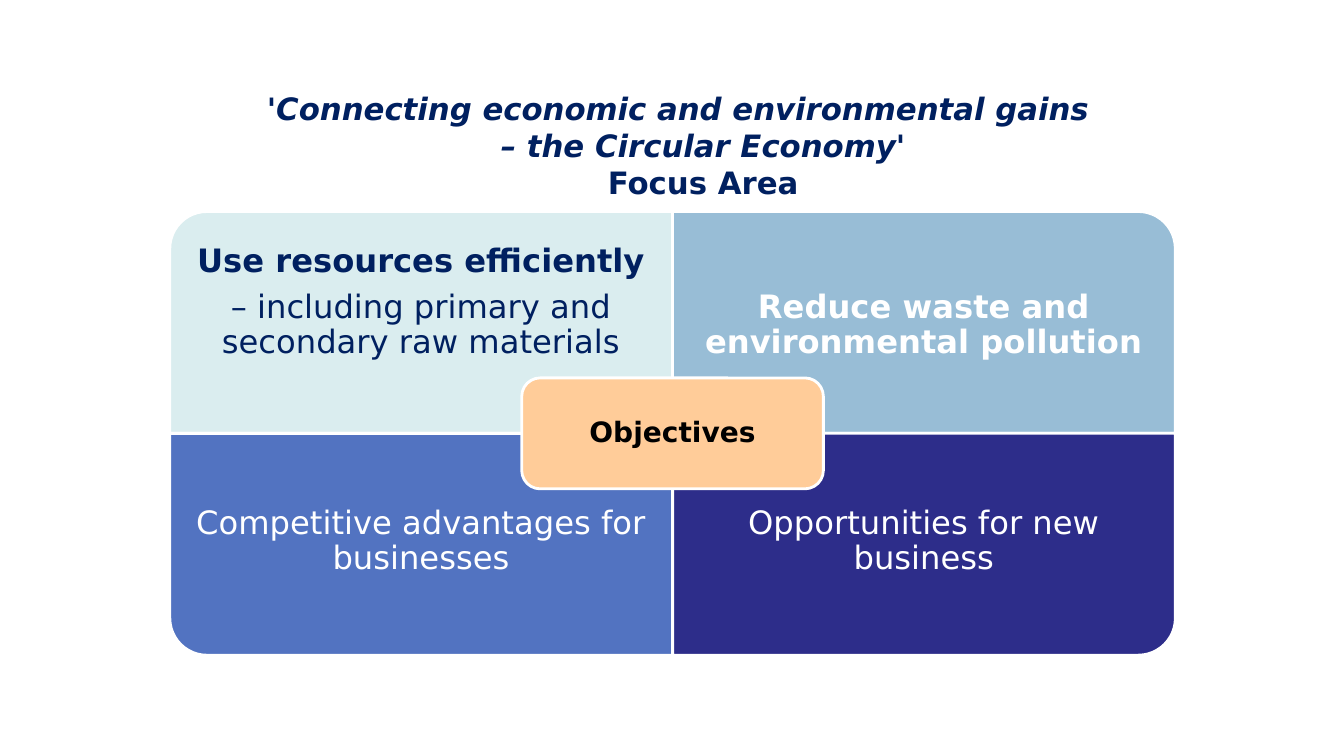
"""Build the slide on the four objectives of the circular economy focus area."""
from pptx import Presentation
from pptx.dml.color import RGBColor
from pptx.enum.shapes import MSO_SHAPE
from pptx.enum.text import MSO_ANCHOR, MSO_AUTO_SIZE, PP_ALIGN
from pptx.util import Cm, Pt

TILE, HUB = MSO_SHAPE.ROUND_1_RECTANGLE, MSO_SHAPE.ROUNDED_RECTANGLE
TOP, MIDDLE, BOTTOM = MSO_ANCHOR.TOP, MSO_ANCHOR.MIDDLE, MSO_ANCHOR.BOTTOM
CENTER, NO_AUTOFIT = PP_ALIGN.CENTER, MSO_AUTO_SIZE.NONE

FONT = "DejaVu Sans"
COLORS = {
    "navy": "002060", "white": "FFFFFF", "black": "000000", "ice": "DAEDEF",
    "sky": "98BDD6", "blue": "5273C1", "indigo": "2D2D8A", "peach": "FFCC99",
}

TITLE = [[
    ("'Connecting economic and environmental gains \v– the Circular Economy'\v", True, True),
    ("Focus Area", True, False),
]]
OBJECTIVES = [
    {"row": 0, "column": 0, "turn": 270, "fill": "ice", "color": "navy",
     "text": [[("Use resources efficiently", True, False)],
              [("– including primary and secondary raw materials", False, False)]]},
    {"row": 0, "column": 1, "turn": 0, "fill": "sky", "color": "white",
     "text": [[("Reduce waste and environmental pollution", True, False)]]},
    {"row": 1, "column": 0, "turn": 180, "fill": "blue", "color": "white",
     "text": [[("Competitive advantages for businesses", False, False)]]},
    {"row": 1, "column": 1, "turn": 90, "fill": "indigo", "color": "white",
     "text": [[("Opportunities for new business", False, False)]]},
]
HUB_TEXT = [[("Objectives", True, False)]]

CENTER_X, CENTER_Y = 16.95, 10.92
TILE_W, TILE_H = 12.67, 5.59
LABEL_H = TILE_H * 0.75
HUB_W, HUB_H = TILE_W * 0.6, TILE_H * 0.5


def write(holder, paragraphs, size, color, anchor=MIDDLE, inset=0.45, bottom=None,
          spacing=0.9, after=8, hanging=0):
    """Fill a shape with centred paragraphs of (text, bold, italic) runs."""
    frame = holder.text_frame
    frame.word_wrap, frame.auto_size = True, NO_AUTOFIT
    frame.vertical_anchor = anchor
    frame.margin_left = frame.margin_right = frame.margin_top = Cm(inset)
    frame.margin_bottom = Cm(inset if bottom is None else bottom)
    for index, runs in enumerate(paragraphs):
        paragraph = frame.paragraphs[0] if index == 0 else frame.add_paragraph()
        paragraph.alignment = CENTER
        paragraph.line_spacing = spacing
        paragraph.space_before, paragraph.space_after = Pt(0), Pt(after)
        if hanging:
            properties = paragraph._p.get_or_add_pPr()
            properties.set("marL", str(Cm(hanging)))
            properties.set("indent", str(-Cm(hanging)))
        for text, bold, italic in runs:
            for part, line in enumerate(text.split("\v")):
                if part:
                    paragraph.add_line_break()
                if line:
                    run = paragraph.add_run()
                    run.text = line
                    run.font.name, run.font.size = FONT, Pt(size)
                    run.font.bold, run.font.italic = bold, italic
                    run.font.color.rgb = RGBColor.from_string(COLORS[color])


def add_block(slide, kind, x, y, width, height, fill, turn=0):
    """Add a filled, white-edged shape centred on x and y, with its size as seen."""
    if turn % 180:
        width, height = height, width
    block = slide.shapes.add_shape(
        kind, Cm(x - width / 2), Cm(y - height / 2), Cm(width), Cm(height))
    block.rotation = turn
    block.shadow.inherit = False
    block.fill.solid()
    block.fill.fore_color.rgb = RGBColor.from_string(COLORS[fill])
    block.line.color.rgb = RGBColor.from_string(COLORS["white"])
    block.line.width = Pt(2)
    return block


def main():
    """Lay out the title, the four tiles and the hub, then save."""
    deck = Presentation()
    deck.slide_width, deck.slide_height = Cm(33.87), Cm(19.05)
    slide = deck.slides.add_slide(deck.slide_layouts[5])

    title = slide.shapes.title
    title.left, title.top, title.width, title.height = Cm(1.09), Cm(3.33), Cm(32.26), Cm(1.6)
    write(title, TITLE, 22, "navy", inset=0.13, bottom=1.06, spacing=1.0, after=0, hanging=1)

    for objective in OBJECTIVES:
        row, column = objective["row"], objective["column"]
        left = CENTER_X + (column - 1) * TILE_W
        top = CENTER_Y + (row - 1) * TILE_H
        add_block(slide, TILE, left + TILE_W / 2, top + TILE_H / 2, TILE_W, TILE_H,
                  objective["fill"], objective["turn"])
        label_top = top + row * (TILE_H - LABEL_H)
        label = slide.shapes.add_textbox(Cm(left), Cm(label_top), Cm(TILE_W), Cm(LABEL_H))
        write(label, objective["text"], 23, objective["color"], anchor=TOP if row else BOTTOM)

    hub = add_block(slide, HUB, CENTER_X, CENTER_Y, HUB_W, HUB_H, "peach")
    write(hub, HUB_TEXT, 20, "black", inset=0.2)

    deck.save("out.pptx")


if __name__ == "__main__":
    main()
